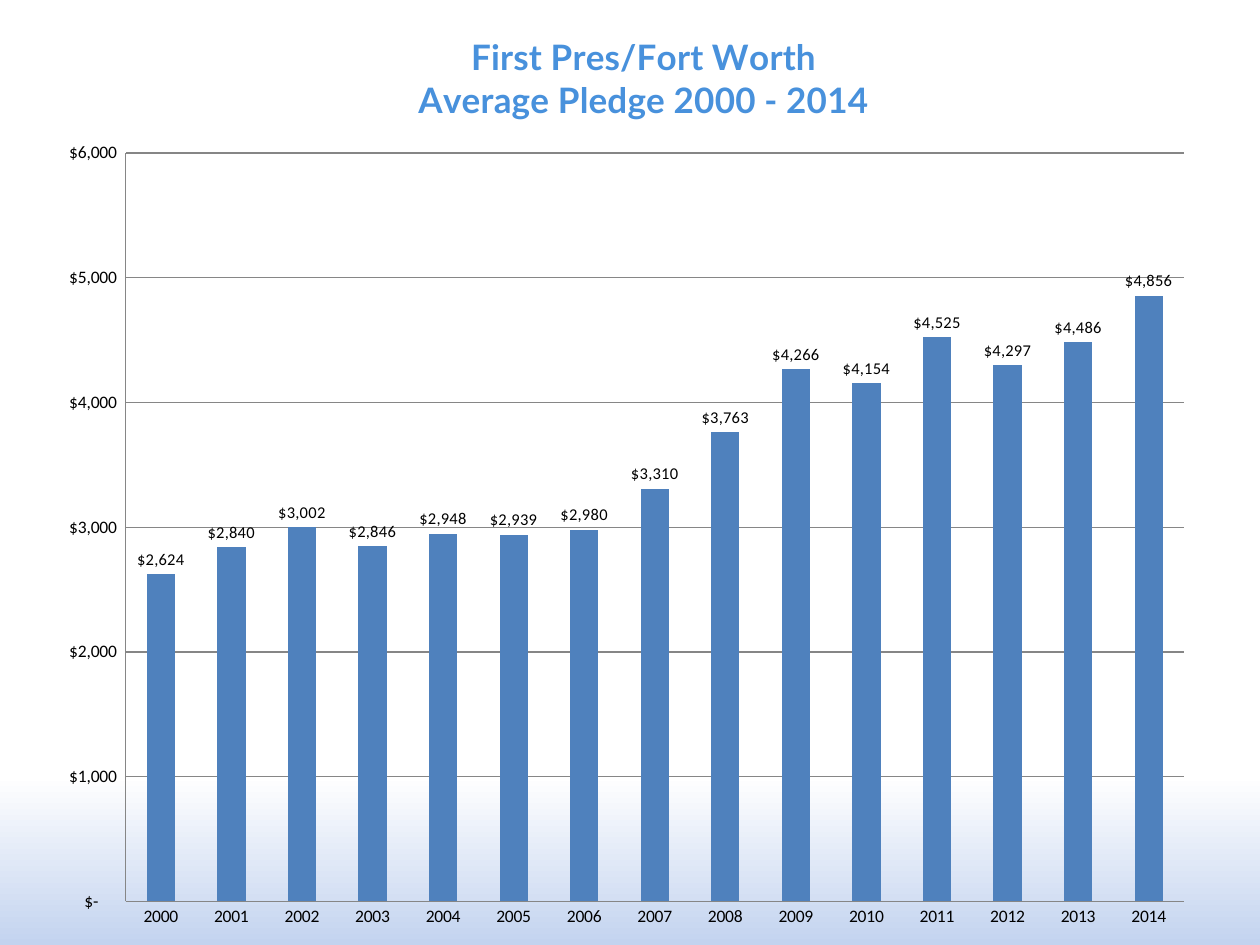
from dataclasses import dataclass

from lxml.etree import SubElement
from pptx import Presentation
from pptx.chart.data import CategoryChartData
from pptx.dml.color import RGBColor
from pptx.enum.chart import XL_CHART_TYPE as ChartType
from pptx.enum.chart import XL_LABEL_POSITION as LabelPosition
from pptx.enum.chart import XL_TICK_MARK as TickMark
from pptx.oxml.ns import qn
from pptx.util import Cm, Pt


@dataclass(frozen=True)
class Theme:
    title: RGBColor = RGBColor(0x48, 0x91, 0xDC)
    bar: RGBColor = RGBColor(0x4F, 0x81, 0xBD)
    text: RGBColor = RGBColor(0, 0, 0)
    line: RGBColor = RGBColor(0x86, 0x86, 0x86)
    glow: RGBColor = RGBColor(0xC3, 0xD3, 0xEF)
    paper: RGBColor = RGBColor(0xFF, 0xFF, 0xFF)
    title_font: str = "Lato"
    body_font: str = "Calibri"
    title_size: float = 20
    axis_size: float = 10
    label_size: float = 9.4
    line_width: float = 0.75


THEME = Theme()
TITLE_LINES = ("First Pres/Fort Worth", "Average Pledge 2000 - 2014")
FIRST_YEAR = 2000
PLEDGES = (2624, 2840, 3002, 2846, 2948, 2939, 2980, 3310,
           3763, 4266, 4154, 4525, 4297, 4486, 4856)
AXIS_FORMAT = r'_("$"* #,##0_);_("$"* \(#,##0\);_("$"* "-"??_);_(@_)'


def style_font(font, name, size, color, bold=False):
    font.name = name
    font.size = Pt(size)
    font.color.rgb = color
    font.bold = bold


def style_line(line):
    line.color.rgb = THEME.line
    line.width = Pt(THEME.line_width)


def paint_background(page):
    fill = page.background.fill
    fill.gradient()
    fill.gradient_angle = 90
    stops = ((0, THEME.glow), (0.18, THEME.paper))
    for stop, (position, color) in zip(fill.gradient_stops, stops):
        stop.position = position
        stop.color.rgb = color


def place_part(part, index, settings):
    layout = part.find(qn("c:layout"))
    if layout is not None:
        part.remove(layout)
    layout = part.makeelement(qn("c:layout"))
    part.insert(index, layout)
    manual = SubElement(layout, qn("c:manualLayout"))
    for name, value in settings.items():
        SubElement(manual, qn(f"c:{name}")).set("val", str(value))


def add_title(chart):
    frame = chart.chart_title.text_frame
    for number, line in enumerate(TITLE_LINES):
        para = frame.add_paragraph() if number else frame.paragraphs[0]
        span = para.add_run()
        span.text = line
        style_font(span.font, THEME.title_font, THEME.title_size, THEME.title, True)
    chart.chart_title.include_in_layout = False
    place_part(chart.element.find(".//" + qn("c:title")), 1,
               {"xMode": "edge", "yMode": "edge", "x": 0.32, "y": 0.03})


def style_axes(chart):
    for axis in (chart.category_axis, chart.value_axis):
        axis.major_tick_mark = TickMark.NONE
        axis.minor_tick_mark = TickMark.NONE
        style_line(axis.format.line)
        style_font(axis.tick_labels.font, THEME.body_font, THEME.axis_size, THEME.text)
    scale = chart.value_axis
    scale.minimum_scale = 0
    scale.maximum_scale = 6000
    scale.major_unit = 1000
    scale.has_major_gridlines = True
    style_line(scale.major_gridlines.format.line)
    scale.tick_labels.number_format = AXIS_FORMAT
    scale.tick_labels.number_format_is_linked = False


def style_bars(plot):
    plot.gap_width = 150
    plot.vary_by_categories = False
    series = plot.series[0]
    series.format.fill.solid()
    series.format.fill.fore_color.rgb = THEME.bar
    labels = series.data_labels
    labels.show_value = True
    labels.position = LabelPosition.OUTSIDE_END
    labels.number_format = r"\$#,##0"
    labels.number_format_is_linked = False
    style_font(labels.font, THEME.body_font, THEME.label_size, THEME.text)


def add_pledge_chart(page):
    data = CategoryChartData()
    data.categories = [str(FIRST_YEAR + step) for step in range(len(PLEDGES))]
    data.add_series("Series 1", PLEDGES)
    chart = page.shapes.add_chart(ChartType.COLUMN_CLUSTERED, Cm(0.84), Cm(0),
                                  Cm(23.5), Cm(19.05), data).chart
    style_font(chart.font, THEME.body_font, THEME.axis_size, THEME.text)
    chart.has_legend = False
    add_title(chart)
    style_axes(chart)
    style_bars(chart.plots[0])
    place_part(chart.element.find(".//" + qn("c:plotArea")), 0,
               {"layoutTarget": "inner", "xMode": "edge", "yMode": "edge",
                "x": 0.072, "y": 0.162, "w": 0.908, "h": 0.792})


def main():
    deck = Presentation()
    deck.slide_width = Cm(25.4)
    deck.slide_height = Cm(19.05)
    page = deck.slides.add_slide(deck.slide_layouts[6])
    paint_background(page)
    add_pledge_chart(page)
    deck.save("out.pptx")


if __name__ == "__main__":
    main()
